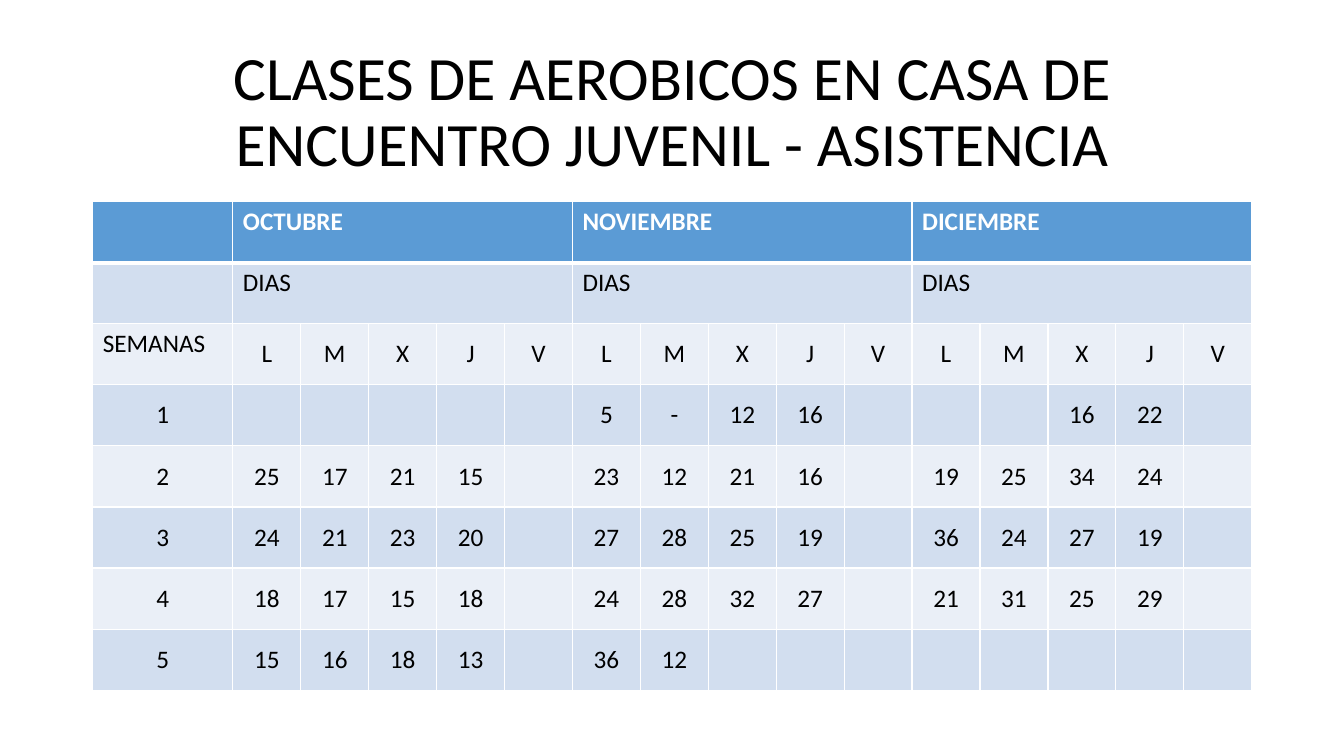
from lxml.etree import SubElement
from pptx import Presentation
from pptx.dml.color import RGBColor
from pptx.enum.text import MSO_ANCHOR, PP_ALIGN
from pptx.oxml.ns import qn
from pptx.util import Inches, Pt

BLACK = RGBColor(0x00, 0x00, 0x00)
WHITE = RGBColor(0xFF, 0xFF, 0xFF)
HEADER_BLUE = RGBColor(0x5B, 0x9B, 0xD5)
BAND_DARK = RGBColor(0xD2, 0xDE, 0xEF)
BAND_LIGHT = RGBColor(0xEA, 0xEF, 0xF7)

MONTHS = ["OCTUBRE", "NOVIEMBRE", "DICIEMBRE"]
DAYS = ["L", "M", "X", "J", "V"]
ATTENDANCE = [
    ["", "", "", "", "", "5", "-", "12", "16", "", "", "", "16", "22", ""],
    ["25", "17", "21", "15", "", "23", "12", "21", "16", "", "19", "25", "34", "24", ""],
    ["24", "21", "23", "20", "", "27", "28", "25", "19", "", "36", "24", "27", "19", ""],
    ["18", "17", "15", "18", "", "24", "28", "32", "27", "", "21", "31", "25", "29", ""],
    ["15", "16", "18", "13", "", "36", "12", "", "", "", "", "", "", "", ""],
]

LEFT, WIDTH = 0.92, 11.5
TABLE_TOP, TABLE_HEIGHT = 2, 4.85
WEEK_WIDTH = 1.39


def write(frame, text, align, font_format):
    paragraph = frame.paragraphs[0]
    paragraph.alignment = align
    run = paragraph.add_run()
    run.text = text
    color = font_format["color"]
    run.font.color.rgb = color
    for key in ("name", "size", "bold"):
        setattr(run.font, key, font_format[key])
    return paragraph


def add_borders(cell, top, bottom):
    properties = cell._tc.get_or_add_tcPr()
    for side, points in {"lnL": 1, "lnR": 1, "lnT": top, "lnB": bottom}.items():
        border = SubElement(properties, qn(f"a:{side}"), w=str(Pt(points)))
        fill = SubElement(border, qn("a:solidFill"))
        SubElement(fill, qn("a:srgbClr"), val=str(WHITE))


presentation = Presentation()
presentation.slide_width = Inches(13.33)
presentation.slide_height = Inches(7.5)
slide = presentation.slides.add_slide(presentation.slide_layouts[6])

title = slide.shapes.add_textbox(Inches(LEFT), Inches(0.4), Inches(WIDTH), Inches(1.45)).text_frame
title.word_wrap = True
title.vertical_anchor = MSO_ANCHOR.MIDDLE
title_line = write(
    title,
    "CLASES DE AEROBICOS EN CASA DE ENCUENTRO JUVENIL - ASISTENCIA",
    PP_ALIGN.CENTER,
    {"name": "Calibri", "size": Pt(44), "bold": False, "color": BLACK},
)
title_line.line_spacing = 0.9

month_row, dias_row = [""], [""]
for month in MONTHS:
    gap = [""] * (len(DAYS) - 1)
    month_row += [month] + gap
    dias_row += ["DIAS"] + gap
rows = [month_row, dias_row, ["SEMANAS"] + DAYS * len(MONTHS)]
rows += [[str(week)] + counts for week, counts in enumerate(ATTENDANCE, 1)]

day_columns = len(MONTHS) * len(DAYS)
attendance = slide.shapes.add_table(
    len(rows), 1 + day_columns,
    Inches(LEFT), Inches(TABLE_TOP), Inches(WIDTH), Inches(TABLE_HEIGHT),
).table
for index, column in enumerate(attendance.columns):
    column.width = Inches((WIDTH - WEEK_WIDTH) / day_columns if index else WEEK_WIDTH)
for row in attendance.rows:
    row.height = Inches(TABLE_HEIGHT / len(rows))

for r, texts in enumerate(rows):
    header = r == 0
    for c, text in enumerate(texts):
        cell = attendance.cell(r, c)
        add_borders(cell, 3 if r == 1 else 1, 3 if header else 1)
        cell.fill.solid()
        cell.fill.fore_color.rgb = HEADER_BLUE if header else BAND_DARK if r % 2 else BAND_LIGHT
        if not text:
            continue
        centered = r > 2 or (r == 2 and c > 0)
        cell.vertical_anchor = MSO_ANCHOR.MIDDLE if centered else MSO_ANCHOR.TOP
        write(
            cell.text_frame, text, PP_ALIGN.CENTER if centered else PP_ALIGN.LEFT,
            {"name": "Calibri", "size": Pt(18), "bold": header, "color": WHITE if header else BLACK},
        )

for r in range(2):
    for first in range(1, 1 + day_columns, len(DAYS)):
        attendance.cell(r, first).merge(attendance.cell(r, first + len(DAYS) - 1))

presentation.save("out.pptx")
